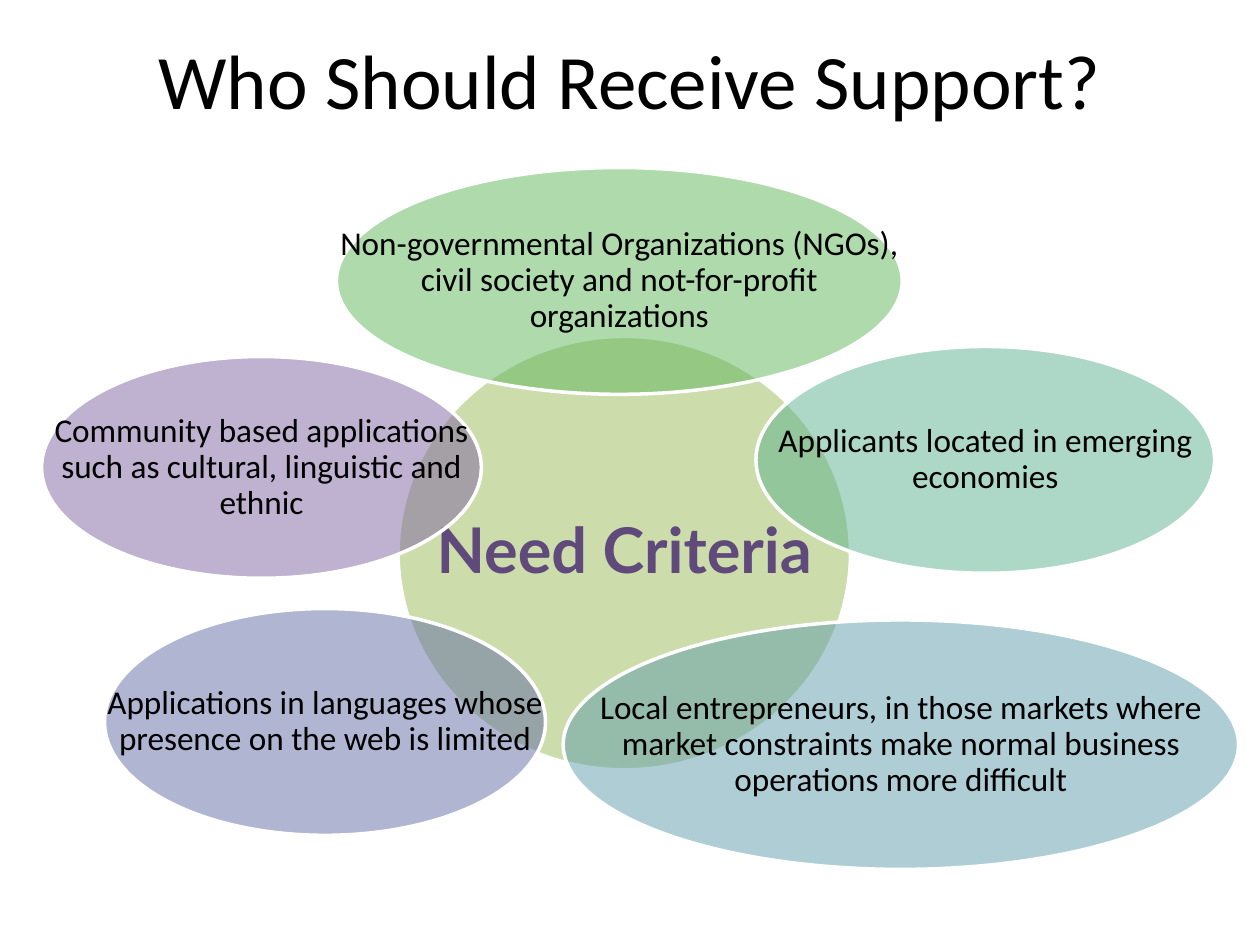
from lxml import etree
from pptx import Presentation
from pptx.dml.color import RGBColor
from pptx.enum import shapes, text
from pptx.oxml import ns
from pptx.util import Inches, Pt

BLACK = RGBColor(0x00, 0x00, 0x00)
WHITE = RGBColor(0xFF, 0xFF, 0xFF)
PLUM = RGBColor(0x60, 0x4A, 0x7B)
OLIVE = RGBColor(0x9B, 0xBB, 0x59)
GREEN = RGBColor(0x5F, 0xB6, 0x5B)
MINT = RGBColor(0x5D, 0xB1, 0x8E)
TEAL = RGBColor(0x5F, 0x9D, 0xAC)
BLUE = RGBColor(0x62, 0x6E, 0xA7)
PURPLE = RGBColor(0x80, 0x64, 0xA2)

GROUPS = [
    ((2.67, 1.33, 4.49, 1.8), GREEN,
     "Non-governmental Organizations (NGOs), civil society and not-for-profit organizations"),
    ((6, 2.75, 3.64, 1.8), MINT, "Applicants located in emerging economies"),
    ((4.47, 4.92, 5.36, 1.98), TEAL,
     "Local entrepreneurs, in those markets where market constraints make normal "
     "business operations more difficult"),
    ((0.83, 4.83, 3.5, 1.8), BLUE,
     "Applications in languages whose presence on the web is limited"),
    ((0.33, 2.83, 3.49, 1.76), PURPLE,
     "Community based applications such as cultural, linguistic and ethnic"),
]


def write(frame, words, size=19, font="Calibri", color=BLACK, bold=False,
          inset=None, space=None):
    frame.word_wrap = True
    frame.auto_size = text.MSO_AUTO_SIZE.NONE
    frame.vertical_anchor = text.MSO_ANCHOR.MIDDLE
    if inset is not None:
        frame.margin_left = frame.margin_right = Inches(inset)
        frame.margin_top = frame.margin_bottom = Inches(inset)
    para = frame.paragraphs[0]
    para.alignment = text.PP_ALIGN.CENTER
    if space:
        para.line_spacing = space
    run = para.add_run()
    run.text = words
    run.font.size = Pt(size)
    run.font.name = font
    run.font.bold = bold
    run.font.color.rgb = color


def add_oval(slide, box, color):
    oval = slide.shapes.add_shape(shapes.MSO_SHAPE.OVAL, *map(Inches, box))
    oval.shadow.inherit = False
    oval.fill.solid()
    oval.fill.fore_color.rgb = color
    tint = oval.fill._xPr.find(ns.qn("a:solidFill"))[0]
    etree.SubElement(tint, ns.qn("a:alpha"), val="50000")
    oval.line.color.rgb = WHITE
    oval.line.width = Pt(2)


def add_label(slide, box, words, **style):
    label = slide.shapes.add_textbox(*map(Inches, box))
    write(label.text_frame, words, space=0.9, **style)


def add_title(slide, words):
    title = slide.shapes.title
    title.left, title.top = Inches(0.5), Inches(0)
    title.width, title.height = Inches(9), Inches(1.25)
    write(title.text_frame, words, size=44)


def main():
    deck = Presentation()
    deck.slide_width, deck.slide_height = Inches(10), Inches(7.5)
    slide = deck.slides.add_slide(deck.slide_layouts[5])
    add_title(slide, "Who Should Receive Support?")
    hub = (3.16, 2.67, 3.59, 3.44)
    add_oval(slide, hub, OLIVE)
    add_label(slide, hub, "Need Criteria", size=36, font="Lato", color=PLUM,
              bold=True, inset=0.05)
    for box, color, words in GROUPS:
        add_oval(slide, box, color)
        add_label(slide, box, words, inset=0.02)
    deck.save("out.pptx")


if __name__ == "__main__":
    main()
